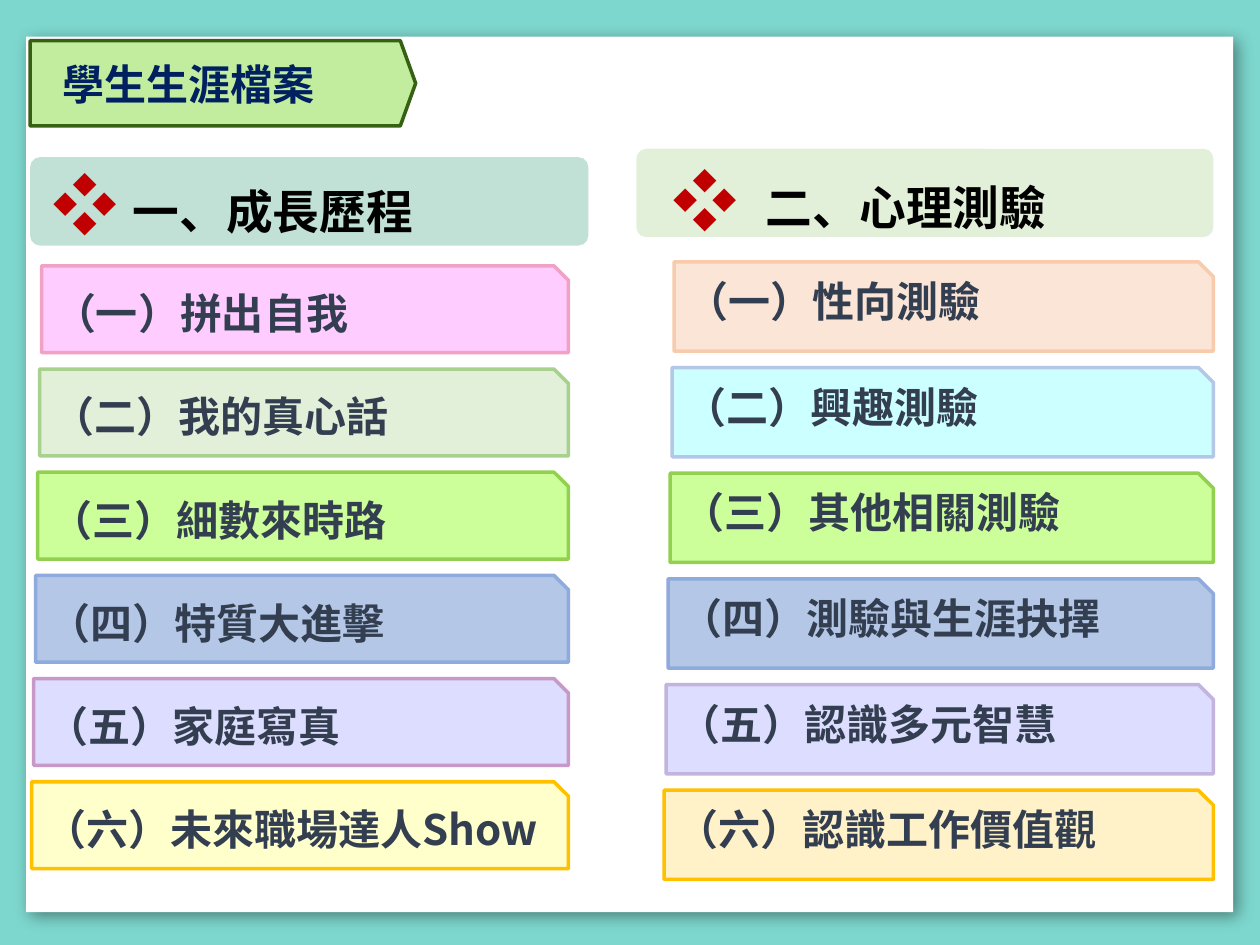
from dataclasses import dataclass
from lxml.etree import SubElement as Sub
from pptx import Presentation as Deck
from pptx.dml.color import RGBColor as RGB
from pptx.enum.shapes import MSO_SHAPE as Form
from pptx.enum.text import MSO_ANCHOR as Anchor, PP_ALIGN as Align
from pptx.oxml.ns import qn
from pptx.util import Cm, Pt


@dataclass(frozen=True)
class Theme:
    font: str = "Noto Sans CJK SC"
    back: str = "7DD7CE"
    page: str = "FFFFFF"
    tag: str = "C3ED9E"
    edge: str = "366012"
    title: str = "002060"
    mark: str = "C00000"
    head: str = "000000"
    item: str = "333F50"
    body: float = 24
    large: float = 26.7
    icon: float = 37.3
    rule: float = 2


LOOK = Theme()


def write(para, text, size=LOOK.body, color=LOOK.item, gap=0):
    run = para.add_run()
    run.text = text
    font = run.font
    font.size, font.bold, font.name = Pt(size), True, LOOK.font
    font.color.rgb = RGB.from_string(color)
    props = font._element
    Sub(props, qn("a:ea"), typeface=LOOK.font)
    if gap:
        props.set("spc", str(gap))


class Board:
    def __init__(self, look, slide):
        self.look, self.slide = look, slide
        fill = slide.background.fill
        fill.solid()
        fill.fore_color.rgb = RGB.from_string(look.back)

    def shape(self, form, box, fill, line=None, adj=None):
        shape = self.slide.shapes.add_shape(form, *map(Cm, box))
        shape.shadow.inherit = False
        shape.fill.solid()
        shape.fill.fore_color.rgb = RGB.from_string(fill)
        if line:
            shape.line.color.rgb = RGB.from_string(line)
            shape.line.width = Pt(self.look.rule)
        else:
            shape.line.fill.background()
        if adj is not None:
            shape.adjustments[0] = adj
        return shape

    def page(self, box):
        shape = self.shape(Form.RECTANGLE, box, self.look.page)
        effect = shape._element.spPr.find(qn("a:effectLst"))
        shade = Sub(effect, qn("a:outerShdw"), blurRad=str(Pt(9)),
                    dist=str(Pt(4)), dir="2700000", algn="tl", rotWithShape="0")
        color = Sub(shade, qn("a:srgbClr"), val="000000")
        Sub(color, qn("a:alpha"), val="40000")

    def text(self, box, inset=None):
        frame = self.slide.shapes.add_textbox(*map(Cm, box)).text_frame
        frame.word_wrap = True
        if inset is not None:
            frame.margin_left = frame.margin_right = Cm(inset)
            frame.margin_top = frame.margin_bottom = Cm(inset)
        return frame.paragraphs[0]

    def title(self, text):
        self.shape(Form.PENTAGON, (0.61, 0.82, 7.77, 1.72),
                   self.look.tag, self.look.edge, 0.18)
        para = self.text((1.14, 1.04, 7.59, 1.42), 0.13)
        write(para, text, color=self.look.title)

    def head(self, text, band, fill, box, gap=0):
        self.shape(Form.ROUNDED_RECTANGLE, band, fill, adj=0.11)
        para = self.text(box)
        para.line_spacing = 1.2
        write(para, "❖ ", self.look.icon, self.look.mark, gap)
        write(para, text, self.look.large, self.look.head)

    def items(self, rows, left, top, right, high, step, anchor):
        for i, (text, fill, line) in enumerate(rows):
            x = left - 0.04 * i
            box = x, top + step * i, right - x, high
            shape = self.shape(Form.SNIP_1_RECTANGLE, box, fill, line)
            frame = shape.text_frame
            frame.vertical_anchor = anchor
            para = frame.paragraphs[0]
            para.alignment = Align.LEFT
            write(para, text)


GROWTH = [
    ("（一）拼出自我", "FFCCFF", "F1A1C3"),
    ("（二）我的真心話", "E2F0D9", "A9D18E"),
    ("（三）細數來時路", "CCFF99", "92D050"),
    ("（四）特質大進擊", "B4C7E7", "8FAADC"),
    ("（五）家庭寫真", "DDDDFF", "C798C8"),
    ("（六）未來職場達人Show", "FFFFCC", "FFC000"),
]
TESTS = [
    ("（一）性向測驗", "FBE5D6", "F8CBAD"),
    ("（二）興趣測驗", "CCFFFF", "B4C7E7"),
    ("（三）其他相關測驗", "CCFF99", "92D050"),
    ("（四）測驗與生涯抉擇", "B4C7E7", "8FAADC"),
    ("（五）認識多元智慧", "DDDDFF", "C3B4DE"),
    ("（六）認識工作價值觀", "FFF2C9", "FFC000"),
]


def main():
    deck = Deck()
    deck.slide_width, deck.slide_height = Cm(25.4), Cm(19.05)
    board = Board(LOOK, deck.slides.add_slide(deck.slide_layouts[6]))
    board.page((0.53, 0.74, 24.33, 17.65))
    board.title("學生生涯檔案")
    board.items(GROWTH, 0.84, 5.36, 11.46, 1.75, 2.08, Anchor.MIDDLE)
    board.head("一、成長歷程", (0.61, 3.17, 11.25, 1.78), "C1E1D7",
               (0.81, 2.87, 8.76, 2.18))
    board.items(TESTS, 13.59, 5.28, 24.46, 1.8, 2.13, Anchor.TOP)
    board.head("二、心理測驗", (12.83, 3, 11.63, 1.78), "E2F0D9",
               (13.31, 2.79, 11.48, 2.18), gap=370)
    deck.save("out.pptx")


if __name__ == "__main__":
    main()
